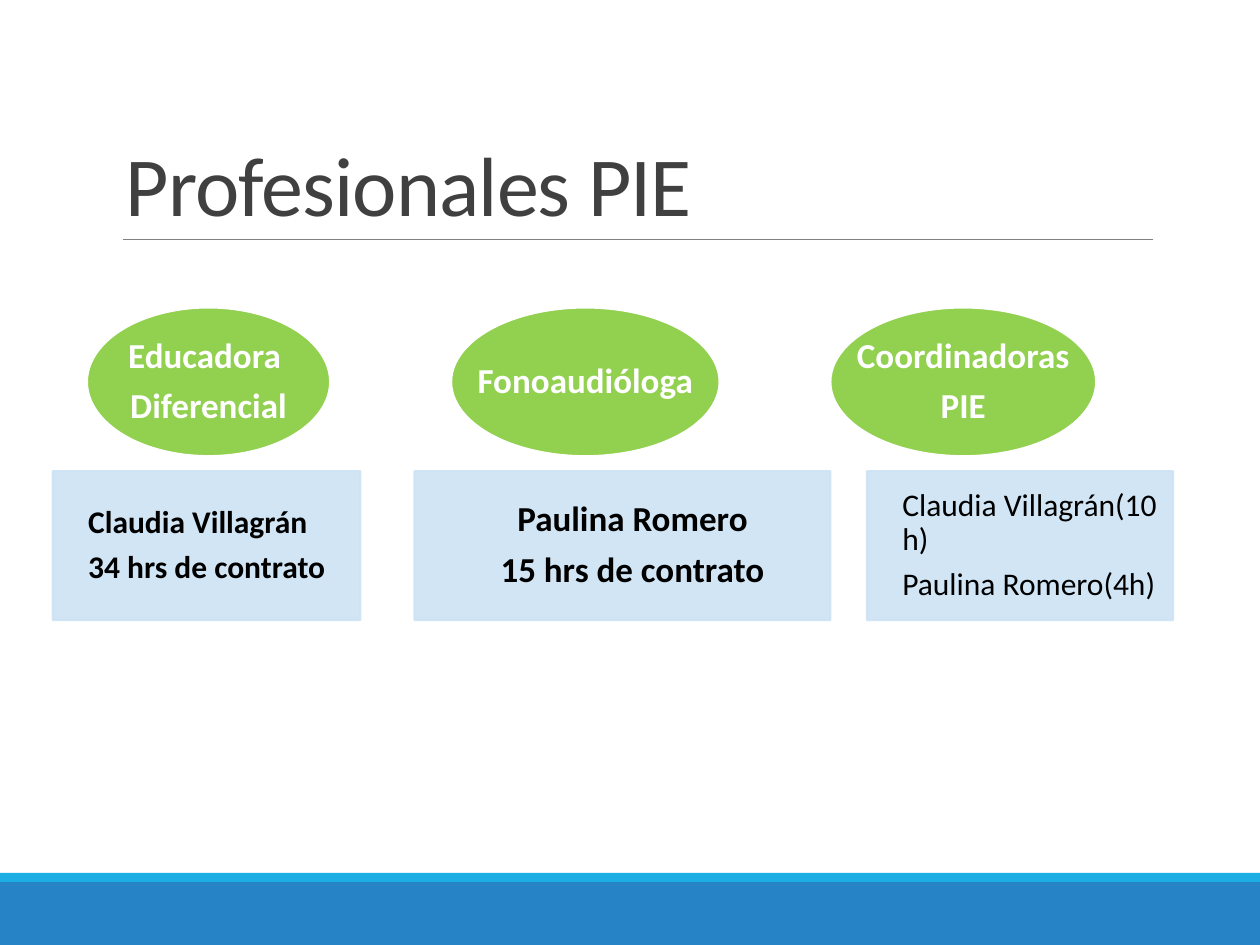
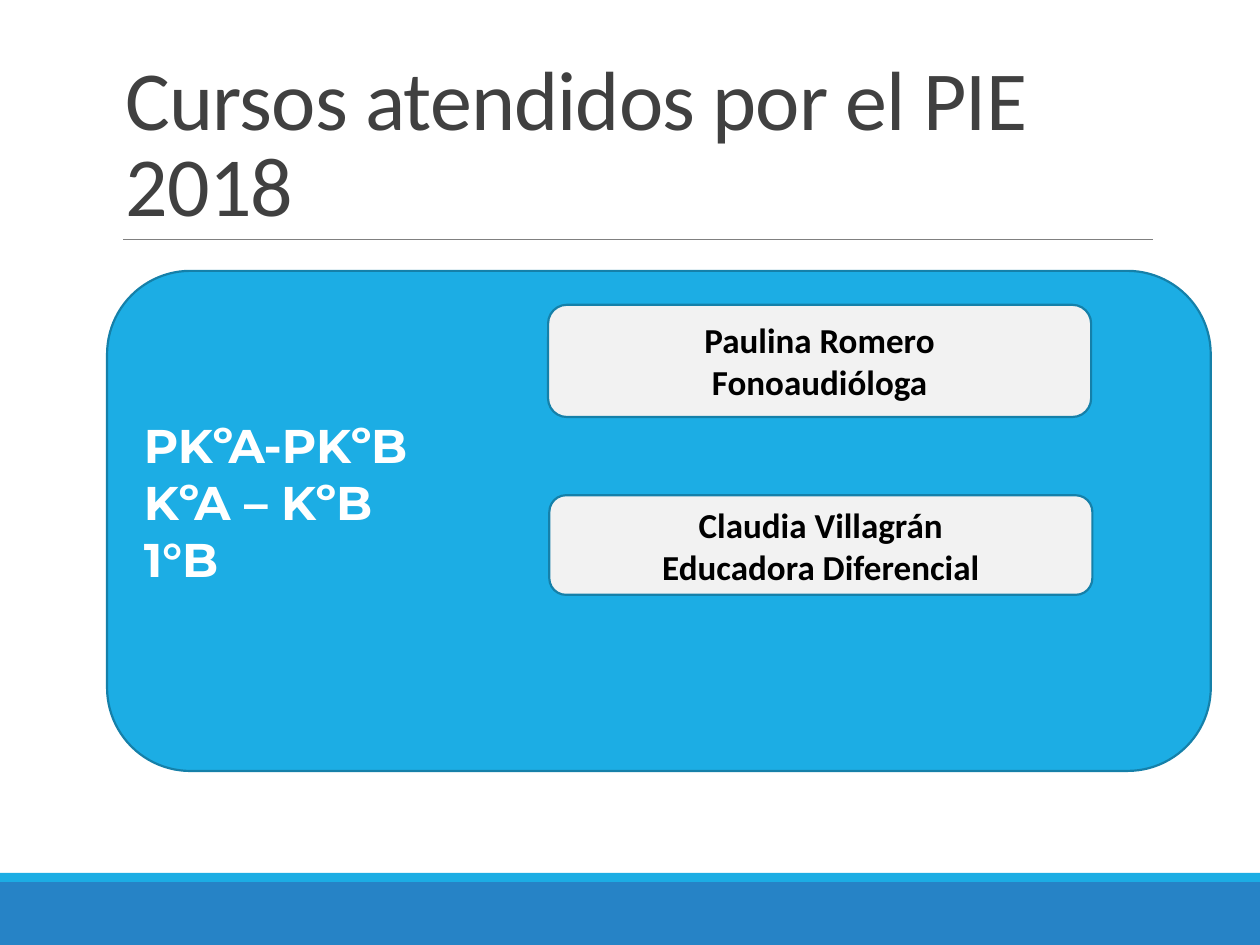
import dataclasses
import pptx
import pptx.util
import pptx.dml.color
import pptx.enum.shapes
import pptx.enum.text
import pptx.oxml
import pptx.oxml.ns

Pt = pptx.util.Pt
Kind = pptx.enum.shapes.MSO_SHAPE
Align = pptx.enum.text.PP_ALIGN
Anchor = pptx.enum.text.MSO_ANCHOR


@dataclasses.dataclass(frozen=True)
class Theme:
    band: str = "2683C6"
    strip: str = "1CADE4"
    edge: str = "1580A9"
    rule: str = "808080"
    title: str = "404040"
    card: str = "CDE3F5"
    oval: str = "92D050"
    label: str = "F2F2F2"
    white: str = "FFFFFF"
    black: str = "000000"
    font: str = "Calibri"
    accent: str = "Montserrat"
    head: int = 48
    big: int = 27
    body: int = 20
    small: int = 18
    line: float = 1.25


THEME = Theme()


def color(code):
    return pptx.dml.color.RGBColor.from_string(code)


def fade(fill, share):
    tint = fill._xPr.find(".//" + pptx.oxml.ns.qn("a:srgbClr"))
    mark = pptx.oxml.parse_xml(
        f'<a:alpha {pptx.oxml.ns.nsdecls("a")} val="{share * 1000}"/>')
    tint.append(mark)


def shape(slide, kind, box, fill, edge=None):
    item = slide.shapes.add_shape(kind, *map(Pt, box))
    item.shadow.inherit = False
    item.fill.solid()
    item.fill.fore_color.rgb = color(fill)
    if edge:
        item.line.color.rgb = color(edge)
        item.line.width = Pt(THEME.line)
    else:
        item.line.fill.background()
    return item


def write(item, lines, size, ink, bold=True, align=Align.CENTER,
          anchor=Anchor.MIDDLE, font=THEME.font, lead=1, after=0, pad=None):
    frame = item.text_frame
    frame.word_wrap = True
    frame.vertical_anchor = anchor
    if pad:
        (frame.margin_left, frame.margin_top,
         frame.margin_right, frame.margin_bottom) = map(Pt, pad)
    for pos, line in enumerate(lines):
        para = frame.add_paragraph() if pos else frame.paragraphs[0]
        para.text = line
        para.alignment = align
        para.line_spacing = lead
        para.space_after = Pt(after * size)
        para.font.name = font
        para.font.size = Pt(size)
        para.font.bold = bold
        para.font.color.rgb = color(ink)
    return frame


def base(deck, title):
    slide = deck.slides.add_slide(deck.slide_layouts[6])
    shape(slide, Kind.RECTANGLE, (0, 504, 720, 36), THEME.band)
    shape(slide, Kind.RECTANGLE, (0, 498.8, 720, 5.2), THEME.strip)
    rule = slide.shapes.add_connector(
        pptx.enum.shapes.MSO_CONNECTOR.STRAIGHT,
        Pt(70.4), Pt(136.8), Pt(658.8), Pt(136.8))
    rule.line.color.rgb = color(THEME.rule)
    rule.line.width = Pt(0.5)
    rule._element.spPr.append(pptx.oxml.parse_xml(
        f'<a:effectLst {pptx.oxml.ns.nsdecls("a")}/>'))
    head = slide.shapes.add_textbox(Pt(64.8), Pt(22.3), Pt(594), Pt(114.5))
    frame = write(head, [title], THEME.head, THEME.title, False,
                  Align.LEFT, Anchor.BOTTOM, lead=0.85)
    frame.paragraphs[0].runs[0].font._element.set("spc", "-50")
    return slide


def role(slide, box, oval, name, staff, size, bold, align):
    left, top, width, high = box
    shift, span = oval
    card = shape(slide, Kind.RECTANGLE, (left, top + 93.6, width, high),
                 THEME.card, THEME.card)
    fade(card.fill, 90)
    fade(card.line.fill, 90)
    write(card, staff, size, THEME.black, bold, align, lead=0.9, after=0.35,
          pad=(20.2, 8.6, 8.6, 8.6))
    disc = shape(slide, Kind.OVAL, (left + shift, top, span, high),
                 THEME.oval, THEME.white)
    frame = write(disc, name, THEME.body, THEME.white, lead=0.9, after=0.35,
                  pad=(0, 0, 0, 0))
    frame.word_wrap = False


def team(deck):
    slide = base(deck, "Profesionales PIE")
    roles = (
        (30.2, 175.7, (19.5, 139), ["Educadora ", "Diferencial"],
         ["Claudia Villagrán", "34 hrs de contrato"],
         THEME.small, True, Align.LEFT),
        (236.9, 237.6, (20.9, 153.4), ["Fonoaudióloga"],
         ["Paulina Romero", "15 hrs de contrato"],
         THEME.body, True, Align.CENTER),
        (495.4, 175, (-20.9, 151.9), ["Coordinadoras", "PIE"],
         ["Claudia Villagrán(10 h)", "Paulina Romero(4h)"],
         THEME.small, False, Align.LEFT),
    )
    for left, width, *rest in roles:
        role(slide, (left, 175.7, width, 85), *rest)


def panel(slide, box, names, staff):
    left, top, width, high = box
    back = shape(slide, Kind.ROUNDED_RECTANGLE, box, THEME.strip, THEME.edge)
    write(back, names, THEME.big, THEME.white, align=Align.LEFT,
          anchor=Anchor.TOP, font=THEME.accent, pad=(7.2, 69.4, 7.2, 3.6))
    for right, down, tall, lines in staff:
        tag = shape(slide, Kind.ROUNDED_RECTANGLE,
                    (left + right, top + down, 310.3, tall),
                    THEME.label, THEME.edge)
        write(tag, lines, THEME.body, THEME.black)


def classes(deck):
    slide = base(deck, "Cursos atendidos por el PIE 2018")
    panel(slide, (61.2, 154.8, 630.7, 285.8),
          ["PKºA-PKºB", "KºA – KºB", "1°B"],
          ((252, 19.4, 64.1, ["Paulina Romero", "Fonoaudióloga"]),
           (252.7, 128.2, 56.9,
            ["Claudia Villagrán", "Educadora Diferencial"])))


def main():
    deck = pptx.Presentation()
    deck.slide_width, deck.slide_height = Pt(720), Pt(540)
    team(deck)
    classes(deck)
    deck.save("out.pptx")


if __name__ == "__main__":
    main()
